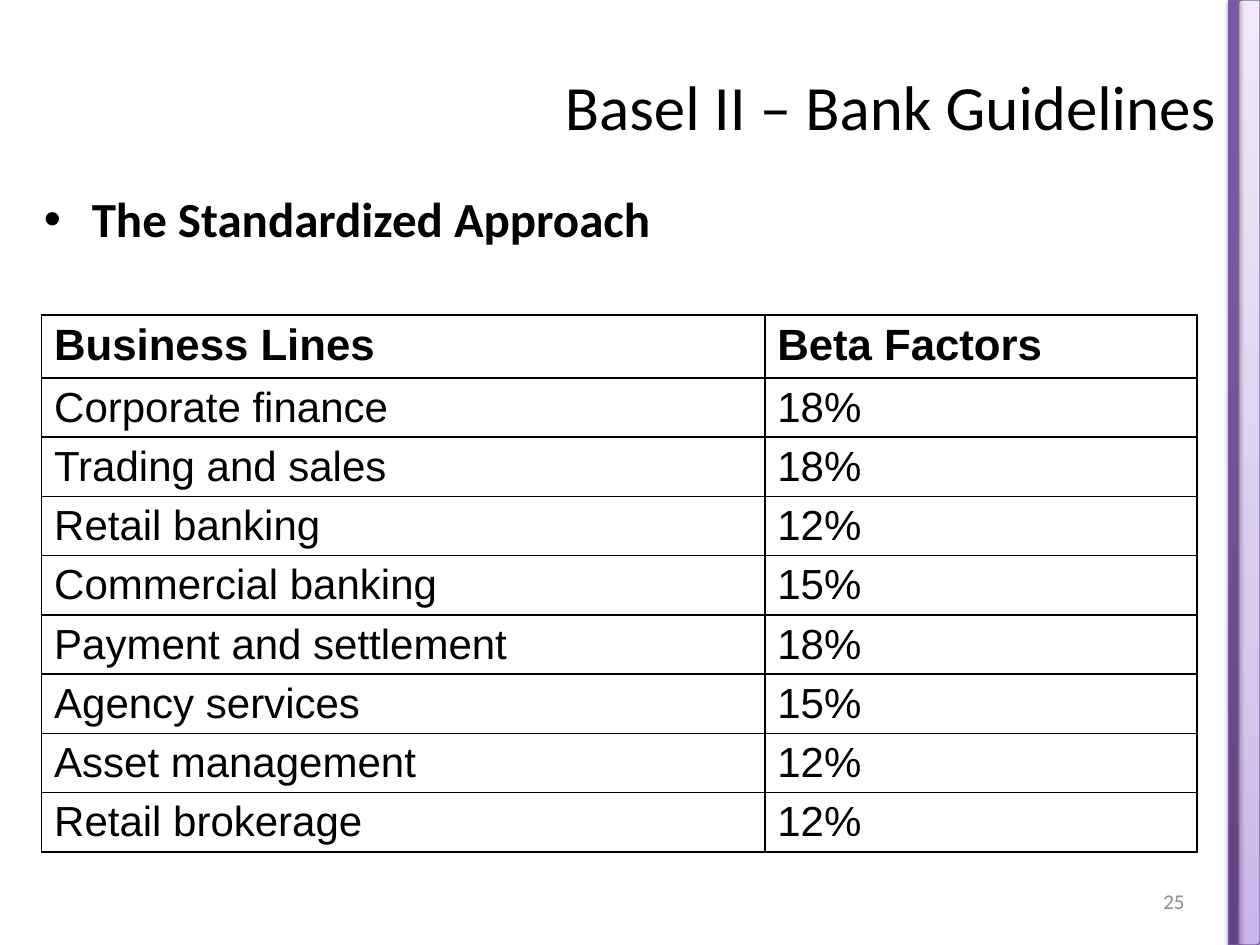
import pptx
import pptx.util
from lxml import etree
from pptx.dml.color import RGBColor
from pptx.enum.shapes import MSO_SHAPE
from pptx.enum.text import MSO_ANCHOR, MSO_AUTO_SIZE, PP_ALIGN
from pptx.oxml.ns import qn
from pptx.util import Inches

COLORS = {
    "text": "000000",
    "number": "8C8C8C",
    "border": "010000",
    "outline": "7D60A0",
    "shadow": "000000",
}
LIGHT_STOPS = [(0, "C9B5E8"), (35, "D8CBEE"), (100, "F0EAF9")]
DARK_STOPS = [(0, "5F4480"), (80, "7B58A6"), (100, "7C57A8")]
ROWS = [
    ("Business Lines", "Beta Factors"),
    ("Corporate finance", "18%"),
    ("Trading and sales", "18%"),
    ("Retail banking", "12%"),
    ("Commercial banking", "15%"),
    ("Payment and settlement", "18%"),
    ("Agency services", "15%"),
    ("Asset management", "12%"),
    ("Retail brokerage", "12%"),
]


def add_element(parent, tag, **attributes):
    values = {name: str(value) for name, value in attributes.items()}
    return etree.SubElement(parent, qn(tag), values)


def add_run(paragraph, text, size, font="Calibri", color="text", bold=False):
    run = paragraph.add_run()
    run.text = text
    run.font.size = pptx.util.Pt(size)
    run.font.name = font
    run.font.bold = bold
    run.font.color.rgb = RGBColor.from_string(COLORS[color])


def set_hanging_indent(paragraph):
    properties = paragraph._p.get_or_add_pPr()
    properties.set("marL", str(Inches(0.38)))
    properties.set("indent", str(-Inches(0.38)))
    return properties


def add_side_band(slide, left, width, stops, shadow_alpha, shadow_distance):
    band = slide.shapes.add_shape(
        MSO_SHAPE.ROUND_2_DIAG_RECTANGLE,
        Inches(left), Inches(0), Inches(width), Inches(7.5),
    )
    band.fill.gradient()
    band.fill.gradient_angle = 90
    properties = band._element.spPr
    stop_list = properties.find(qn("a:gradFill")).find(qn("a:gsLst"))
    for old_stop in list(stop_list):
        stop_list.remove(old_stop)
    for position, color in stops:
        stop = add_element(stop_list, "a:gs", pos=position * 1000)
        add_element(stop, "a:srgbClr", val=color)
    band.line.color.rgb = RGBColor.from_string(COLORS["outline"])
    band.line.width = pptx.util.Pt(0.75)
    band.shadow.inherit = False
    shadow = add_element(
        properties.find(qn("a:effectLst")), "a:outerShdw",
        blurRad=pptx.util.Pt(3.1), dist=pptx.util.Pt(shadow_distance),
        dir=90 * 60000, rotWithShape=0,
    )
    shadow_color = add_element(shadow, "a:srgbClr", val=COLORS["shadow"])
    add_element(shadow_color, "a:alpha", val=shadow_alpha * 1000)


def set_title(slide, text):
    title = slide.shapes.title
    title.left, title.top = Inches(2.75), Inches(0.5)
    title.width, title.height = Inches(7), Inches(0.67)
    frame = title.text_frame
    frame.auto_size = MSO_AUTO_SIZE.NONE
    frame.vertical_anchor = MSO_ANCHOR.MIDDLE
    paragraph = frame.paragraphs[0]
    paragraph.alignment = PP_ALIGN.RIGHT
    add_run(paragraph, text, 36)


def add_text_box(slide, left, top, width, height):
    box = slide.shapes.add_textbox(
        Inches(left), Inches(top), Inches(width), Inches(height)
    )
    box.text_frame.word_wrap = True
    return box.text_frame


def add_bullet(slide, text):
    paragraph = add_text_box(slide, 0.25, 1.5, 5.92, 0.75).paragraphs[0]
    paragraph.line_spacing = 0.9
    paragraph.space_before = pptx.util.Pt(5.6)
    properties = set_hanging_indent(paragraph)
    add_element(properties, "a:buFont", typeface="Arial")
    add_element(properties, "a:buChar", char="•")
    add_run(paragraph, text, 28, bold=True)


def add_page_number(slide, text):
    frame = add_text_box(slide, 7.17, 6.95, 2.33, 0.4)
    frame.vertical_anchor = MSO_ANCHOR.MIDDLE
    paragraph = frame.paragraphs[0]
    paragraph.alignment = PP_ALIGN.RIGHT
    add_run(paragraph, text, 12, color="number")


def format_cell(cell, text, is_header):
    properties = cell._tc.get_or_add_tcPr()
    for side in ("a:lnL", "a:lnR", "a:lnT", "a:lnB"):
        border = add_element(properties, side, w=pptx.util.Pt(1))
        fill = add_element(border, "a:solidFill")
        add_element(fill, "a:srgbClr", val=COLORS["border"])
    cell.fill.background()
    cell.margin_bottom = Inches(0.02)
    paragraph = cell.text_frame.paragraphs[0]
    set_hanging_indent(paragraph)
    add_run(paragraph, text, 25 if is_header else 24, "Arial", bold=is_header)


def add_beta_table(slide):
    table = slide.shapes.add_table(
        len(ROWS), 2, Inches(0.33), Inches(2.5), Inches(9.17), Inches(4.26)
    ).table
    table.horz_banding = False
    for column, width in zip(table.columns, (5.74, 3.43)):
        column.width = Inches(width)
    for row_index, values in enumerate(ROWS):
        is_header = row_index == 0
        table.rows[row_index].height = Inches(0.5 if is_header else 0.47)
        for column_index, text in enumerate(values):
            format_cell(table.cell(row_index, column_index), text, is_header)


def main():
    presentation = pptx.Presentation()
    presentation.slide_width = Inches(10)
    presentation.slide_height = Inches(7.5)
    slide = presentation.slides.add_slide(presentation.slide_layouts[5])
    add_side_band(slide, 9.83, 0.17, LIGHT_STOPS, 38, 1.6)
    add_side_band(slide, 9.75, 0.08, DARK_STOPS, 35, 1.8)
    set_title(slide, "Basel II – Bank Guidelines")
    add_bullet(slide, "The Standardized Approach")
    add_beta_table(slide)
    add_page_number(slide, "25")
    presentation.save("out.pptx")


if __name__ == "__main__":
    main()
